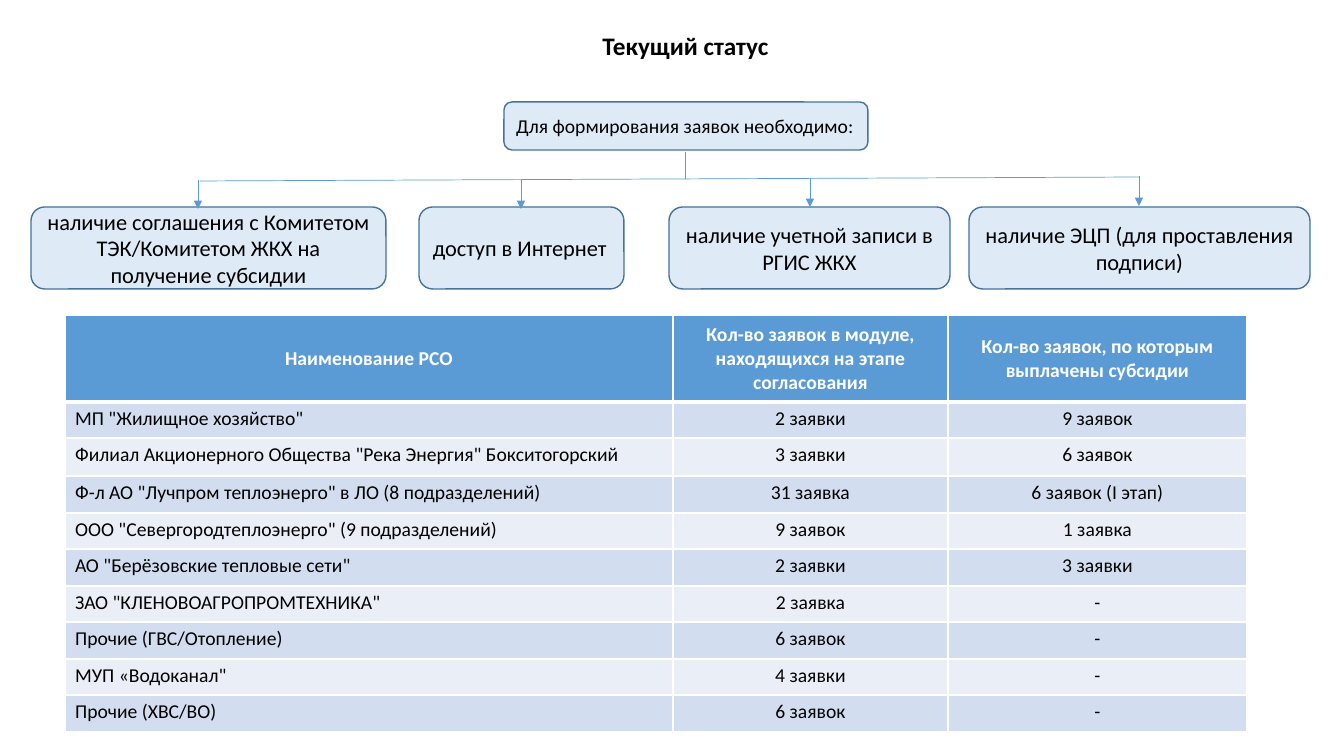
from dataclasses import dataclass

from lxml.etree import SubElement
from pptx import Presentation
from pptx.dml.color import RGBColor
from pptx.enum.shapes import MSO_CONNECTOR, MSO_SHAPE
from pptx.enum.text import MSO_ANCHOR as Anchor, PP_ALIGN as Align
from pptx.oxml.ns import qn
from pptx.util import Emu, Pt


@dataclass(frozen=True)
class Theme:
    font: str = "Calibri"
    black: RGBColor = RGBColor(0x00, 0x00, 0x00)
    white: RGBColor = RGBColor(0xFF, 0xFF, 0xFF)
    accent: RGBColor = RGBColor(0x5B, 0x9B, 0xD5)
    box_fill: RGBColor = RGBColor(0xDE, 0xEB, 0xF7)
    box_line: RGBColor = RGBColor(0x43, 0x73, 0x9E)
    odd_row: RGBColor = RGBColor(0xD2, 0xDE, 0xEF)
    even_row: RGBColor = RGBColor(0xEA, 0xEF, 0xF7)
    title_size: int = 18
    box_size: int = 16
    small_size: int = 14


theme = Theme()
PX = 914400 / 100.8


def px(*lengths):
    return [Emu(round(length * PX)) for length in lengths]


def write(frame, text, size, color=theme.black, bold=False, align=Align.CENTER):
    frame.word_wrap = True
    paragraph = frame.paragraphs[0]
    paragraph.alignment = align
    run = paragraph.add_run()
    run.text = text
    run.font.name = theme.font
    run.font.size = Pt(size)
    run.font.bold = bold
    run.font.color.rgb = color


presentation = Presentation()
presentation.slide_width, presentation.slide_height = px(1344, 756)
slide = presentation.slides.add_slide(presentation.slide_layouts[6])

# Title
title = slide.shapes.add_textbox(*px(95, 14, 1181, 67))
write(title.text_frame, "Текущий статус", theme.title_size, bold=True)
title.text_frame.vertical_anchor = Anchor.MIDDLE
title.text_frame.paragraphs[0].line_spacing = 0.9

# Requirement boxes: left, top, width, height, text, size, alignment
ROW_TOP, ROW_HEIGHT = 207, 82
boxes = [
    (504, 102, 364, 48, "Для формирования заявок необходимо:", theme.small_size, Align.LEFT),
    (31, ROW_TOP, 355, ROW_HEIGHT,
     "наличие соглашения с Комитетом ТЭК/Комитетом ЖКХ на получение субсидии",
     theme.box_size, Align.CENTER),
    (419, ROW_TOP, 205, ROW_HEIGHT, "доступ в Интернет", theme.box_size, Align.LEFT),
    (669, ROW_TOP, 281, ROW_HEIGHT, "наличие учетной записи в РГИС ЖКХ",
     theme.box_size, Align.CENTER),
    (969, ROW_TOP, 341, ROW_HEIGHT, "наличие ЭЦП (для проставления подписи)",
     theme.box_size, Align.CENTER),
]
for left, top, width, height, text, size, align in boxes:
    box = slide.shapes.add_shape(MSO_SHAPE.ROUNDED_RECTANGLE, *px(left, top, width, height))
    box.shadow.inherit = False
    box.fill.solid()
    box.fill.fore_color.rgb = theme.box_fill
    box.line.color.rgb = theme.box_line
    box.line.width = Pt(1)
    box.text_frame.vertical_anchor = Anchor.MIDDLE
    write(box.text_frame, text, size, align=align)

# Branching lines: start x, start y, end x, end y, arrowhead
branches = [
    (685, 152, 685, 179, False),
    (200, 181, 1140, 177, False),
    (198, 180, 198, 209, True),
    (521, 180, 521, 209, True),
    (810, 178, 810, 207, True),
    (1139, 176, 1139, 206, True),
]
for *ends, has_arrow in branches:
    branch = slide.shapes.add_connector(MSO_CONNECTOR.STRAIGHT, *px(*ends))
    branch.line.color.rgb = theme.accent
    branch.line.width = Pt(0.5)
    if has_arrow:
        SubElement(branch.line._get_or_add_ln(), qn("a:tailEnd"), type="triangle")
    SubElement(branch._element.spPr, qn("a:effectLst"))

# Applications table
rows = [
    ("Наименование РСО", "Кол-во заявок в модуле, находящихся на этапе согласования",
     "Кол-во заявок, по которым выплачены субсидии"),
    ('МП "Жилищное хозяйство"', "2 заявки", "9 заявок"),
    ('Филиал Акционерного Общества "Река Энергия" Бокситогорский', "3 заявки", "6 заявок"),
    ('Ф-л АО "Лучпром теплоэнерго" в ЛО (8 подразделений)', "31 заявка", "6 заявок (I этап)"),
    ('ООО "Севергородтеплоэнерго" (9 подразделений)', "9 заявок", "1 заявка"),
    ('АО "Берёзовские тепловые сети"', "2 заявки", "3 заявки"),
    ('ЗАО "КЛЕНОВОАГРОПРОМТЕХНИКА"', "2 заявка", "-"),
    ("Прочие (ГВС/Отопление)", "6 заявок", "-"),
    ('МУП «Водоканал"', "4 заявки", "-"),
    ("Прочие (ХВС/ВО)", "6 заявок", "-"),
]
column_widths = [608, 275, 299]
row_heights = [87, 36, 38, 37, 36, 37, 36, 37, 36, 37]
table = slide.shapes.add_table(
    len(rows), len(column_widths),
    *px(65, 315, sum(column_widths), sum(row_heights))).table
for column, width in zip(table.columns, px(*column_widths)):
    column.width = width
for row, height in zip(table.rows, px(*row_heights)):
    row.height = height

for row_index, texts in enumerate(rows):
    is_header = row_index == 0
    if is_header:
        fill_color = theme.accent
    else:
        fill_color = theme.odd_row if row_index % 2 else theme.even_row
    border_widths = {
        "a:lnL": 1,
        "a:lnR": 1,
        "a:lnT": 3 if row_index == 1 else 1,
        "a:lnB": 3 if is_header else 1,
    }
    for column_index, text in enumerate(texts):
        cell = table.cell(row_index, column_index)
        properties = cell._tc.get_or_add_tcPr()
        for tag, width in border_widths.items():
            border = SubElement(properties, qn(tag), w=str(Pt(width)))
            border_fill = SubElement(border, qn("a:solidFill"))
            SubElement(border_fill, qn("a:srgbClr"), val=str(theme.white))
        cell.fill.solid()
        cell.fill.fore_color.rgb = fill_color
        cell.vertical_anchor = Anchor.MIDDLE if is_header else Anchor.TOP
        write(cell.text_frame, text, theme.small_size,
              color=theme.white if is_header else theme.black, bold=is_header,
              align=Align.CENTER if is_header or column_index else Align.LEFT)

presentation.save("out.pptx")
